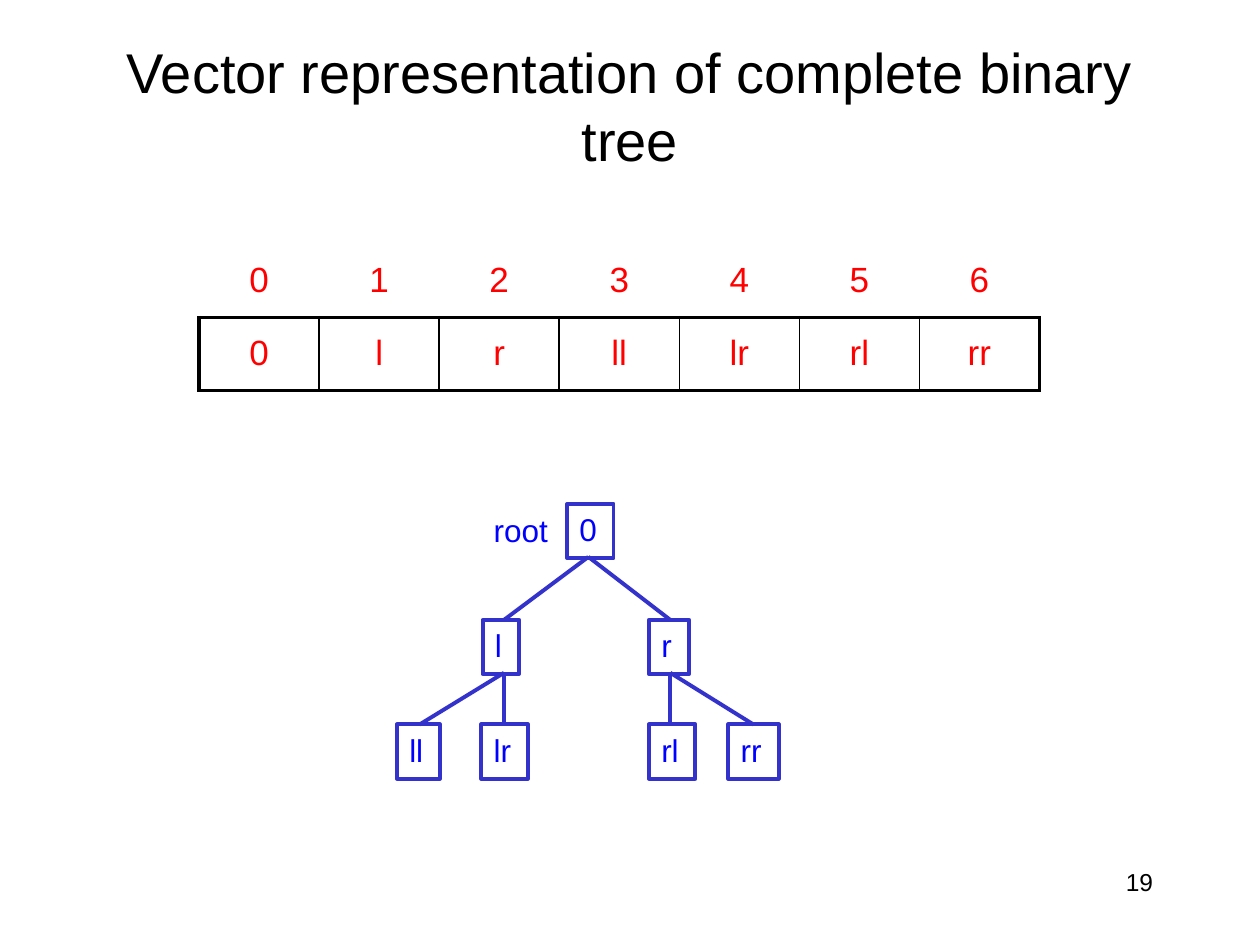
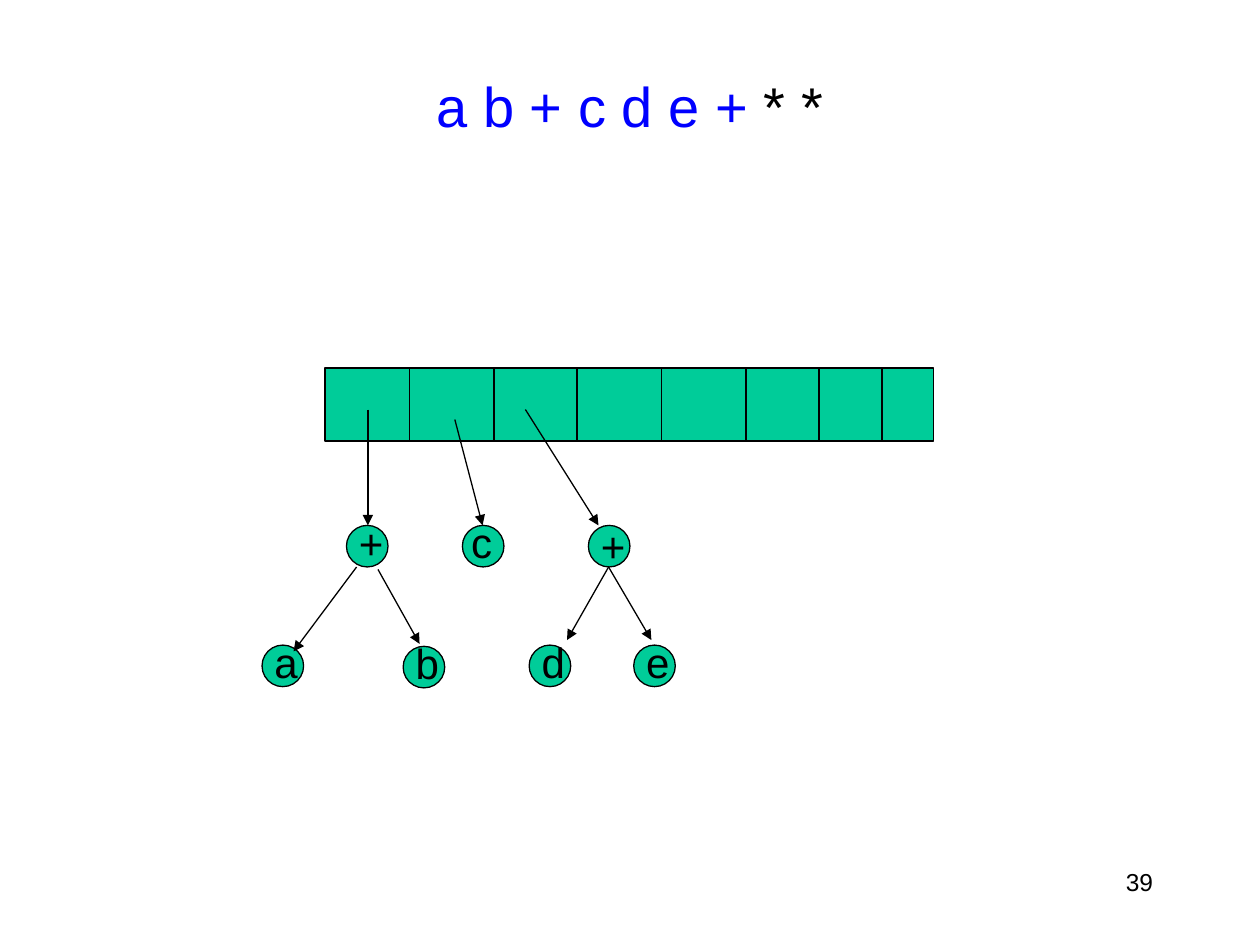
import itertools
from dataclasses import dataclass

import pptx
import pptx.dml.color
import pptx.enum.shapes
import pptx.enum.text
import pptx.oxml
import pptx.oxml.ns
import pptx.util
from pptx.util import Inches

RGBColor = pptx.dml.color.RGBColor
Shape = pptx.enum.shapes.MSO_SHAPE
Align = pptx.enum.text.PP_ALIGN
Anchor = pptx.enum.text.MSO_ANCHOR

BLACK = RGBColor(0x00, 0x00, 0x00)
WHITE = RGBColor(0xFF, 0xFF, 0xFF)
BLUE = RGBColor(0x00, 0x00, 0xFF)
INDIGO = RGBColor(0x33, 0x33, 0xCC)
RED = RGBColor(0xFF, 0x00, 0x00)
GREEN = RGBColor(0x00, 0xCC, 0x99)
FONT = "Arial"

THICK, THIN, INNER = 2.25, 0.75, 1
NODE_HEIGHT, PORT_DROP = 0.43, 0.42
CIRCLE = 0.33
VECTOR_LEFT, VECTOR_WIDTH = 1.58, 6.67
STACK_LEFT, STACK_TOP, STACK_WIDTH, STACK_HEIGHT = 2.58, 2.92, 4.83, 0.58


@dataclass(frozen=True)
class Style:
    size: float
    color: RGBColor
    align: Align = Align.LEFT
    anchor: Anchor = Anchor.TOP
    wrap: bool = False


@dataclass(frozen=True)
class TreeNode:
    label: str
    left: float
    top: float
    width: float
    port: float


@dataclass(frozen=True)
class Token:
    label: str
    left: float
    top: float
    width: float
    shift: float = 0
    rise: float = 0.12


@dataclass(frozen=True)
class Segment:
    x1: float
    y1: float
    x2: float
    y2: float


@dataclass(frozen=True)
class Borders:
    color: RGBColor
    outer: float
    inner: float


TITLE = Style(32, BLACK, Align.CENTER, Anchor.MIDDLE, True)
NUMBER = Style(14, BLACK, Align.RIGHT, wrap=True)
NODE = Style(18, BLUE)
TOKEN = Style(24, BLACK)
CELL = Style(20, RED, Align.CENTER)

TREE = [
    TreeNode("0", 4.5, 4, 0.37, 4.67),
    TreeNode("l", 3.83, 4.92, 0.29, 4),
    TreeNode("r", 5.15, 4.92, 0.32, 5.32),
    TreeNode("ll", 3.15, 5.75, 0.34, 3.33),
    TreeNode("lr", 3.82, 5.75, 0.37, 4),
    TreeNode("rl", 5.15, 5.75, 0.37, 5.32),
    TreeNode("rr", 5.78, 5.75, 0.4, 5.98),
]
TOKENS = [
    Token("+", 2.75, 4.17, 0.4, rise=0.11),
    Token("a", 2.08, 5.12, 0.39),
    Token("b", 3.2, 5.13, 0.39),
    Token("c", 3.67, 4.17, 0.37, shift=-0.03),
    Token("+", 4.67, 4.17, 0.4, rise=0.09),
    Token("d", 4.2, 5.12, 0.39),
    Token("e", 5.03, 5.12, 0.39),
]
POINTERS = [
    Segment(2.92, 3.25, 2.92, 4.17),
    Segment(3.61, 3.33, 3.83, 4.17),
    Segment(4.17, 3.25, 4.75, 4.17),
    Segment(2.83, 4.5, 2.33, 5.17),
    Segment(3, 4.52, 3.33, 5.11),
    Segment(4.83, 4.5, 4.5, 5.08),
    Segment(4.83, 4.5, 5.17, 5.08),
]
SLOT_WIDTHS = [0.67, 0.67, 0.66, 0.67, 0.67, 0.58, 0.5]


def apply(target, values: dict) -> None:
    for name, value in values.items():
        setattr(target, name, value)


def write(frame, parts: list[tuple[str, RGBColor]], style: Style) -> None:
    para = frame.paragraphs[0]
    para.alignment = style.align
    for text, color in parts:
        span = para.add_run()
        span.text = text
        apply(span.font, {"name": FONT, "size": pptx.util.Pt(style.size)})
        span.font.color.rgb = color


def add_text(page, left: float, top: float, width: float, height: float,
             style: Style, *parts: tuple[str, RGBColor]) -> None:
    box = page.shapes.add_textbox(
        Inches(left), Inches(top), Inches(width), Inches(height))
    apply(box.text_frame,
          {"word_wrap": style.wrap, "vertical_anchor": style.anchor})
    write(box.text_frame, list(parts), style)


def add_outline(page, kind: Shape, left: float, top: float, width: float,
                height: float, color: RGBColor, weight: float,
                fill: RGBColor | None = None):
    shape = page.shapes.add_shape(
        kind, Inches(left), Inches(top), Inches(width), Inches(height))
    shape.shadow.inherit = False
    if fill is None:
        shape.fill.background()
    else:
        shape.fill.solid()
        shape.fill.fore_color.rgb = fill
    shape.line.color.rgb = color
    shape.line.width = pptx.util.Pt(weight)
    return shape


def add_segment(page, segment: Segment, color: RGBColor, weight: float,
                arrow: bool = False) -> None:
    line = page.shapes.add_connector(
        pptx.enum.shapes.MSO_CONNECTOR.STRAIGHT,
        Inches(segment.x1), Inches(segment.y1),
        Inches(segment.x2), Inches(segment.y2))
    line.line.color.rgb = color
    line.line.width = pptx.util.Pt(weight)
    properties = line.element.spPr
    if arrow:
        outline = properties.find(pptx.oxml.ns.qn("a:ln"))
        outline.append(pptx.oxml.parse_xml(
            f'<a:tailEnd {pptx.oxml.ns.nsdecls("a")} type="triangle"/>'))
    properties.append(pptx.oxml.parse_xml(
        f'<a:effectLst {pptx.oxml.ns.nsdecls("a")}/>'))


def set_borders(cell, color: RGBColor, weights: dict[str, float]) -> None:
    properties = cell._tc.get_or_add_tcPr()
    for position, (side, weight) in enumerate(weights.items()):
        properties.insert(position, pptx.oxml.parse_xml(
            f'<a:ln{side} {pptx.oxml.ns.nsdecls("a")} '
            f'w="{pptx.util.Pt(weight)}"><a:solidFill>'
            f'<a:srgbClr val="{color}"/></a:solidFill></a:ln{side}>'))


def add_row(page, top: float, height: float, labels: list[str],
            borders: Borders) -> None:
    table = page.shapes.add_table(
        1, len(labels), Inches(VECTOR_LEFT), Inches(top),
        Inches(VECTOR_WIDTH), Inches(height)).table
    apply(table, {"first_row": False, "horz_banding": False})
    last = len(labels) - 1
    for index, label in enumerate(labels):
        table.columns[index].width = Inches(VECTOR_WIDTH / len(labels))
        cell = table.cell(0, index)
        cell.fill.background()
        if label:
            write(cell.text_frame, [(label, CELL.color)], CELL)
        set_borders(cell, borders.color, {
            "L": borders.outer if index == 0 else borders.inner,
            "R": borders.outer if index == last else borders.inner,
            "T": borders.outer,
            "B": borders.outer,
        })


def add_page(deck, number: int, *title: tuple[str, RGBColor]):
    page = deck.slides.add_slide(deck.slide_layouts[6])
    add_text(page, 0.75, 0.42, 8.5, 0.83, TITLE, *title)
    add_text(page, 7.17, 6.83, 2.08, 0.5, NUMBER, (str(number), BLACK))
    return page


def build_vector_page(deck) -> None:
    page = add_page(
        deck, 19, ("Vector representation of complete binary tree", BLACK))
    for node in TREE:
        box = add_outline(page, Shape.RECTANGLE, node.left, node.top,
                          node.width, NODE_HEIGHT, INDIGO, THICK)
        apply(box.text_frame,
              {"word_wrap": NODE.wrap, "vertical_anchor": NODE.anchor})
        write(box.text_frame, [(node.label, NODE.color)], NODE)
    for index, child in enumerate(TREE[1:], 1):
        parent = TREE[(index - 1) // 2]
        edge = Segment(parent.port, parent.top + PORT_DROP,
                       child.port, child.top)
        add_segment(page, edge, INDIGO, THICK)
    add_text(page, 3.82, 4.01, 0.63, 0.4, NODE, ("root", BLUE))
    plain = Borders(WHITE, THICK, THICK)
    add_row(page, 2.6, 0.56, [node.label for node in TREE], plain)
    add_row(page, 2.02, 0.56, [str(i) for i in range(len(TREE))], plain)
    add_row(page, 2.52, 0.58, [""] * len(TREE), Borders(BLACK, THICK, INNER))


def build_stack_page(deck) -> None:
    page = add_page(deck, 39, ("a b + c d e +", BLUE), (" * *", BLACK))
    add_outline(page, Shape.RECTANGLE, STACK_LEFT, STACK_TOP, STACK_WIDTH,
                STACK_HEIGHT, BLACK, THIN, GREEN)
    for offset in itertools.accumulate(SLOT_WIDTHS):
        x = STACK_LEFT + offset
        divider = Segment(x, STACK_TOP, x, STACK_TOP + STACK_HEIGHT)
        add_segment(page, divider, BLACK, THIN)
    for token in TOKENS:
        add_outline(page, Shape.OVAL, token.left, token.top, CIRCLE, CIRCLE,
                    BLACK, THIN, GREEN)
        add_text(page, token.left + token.shift, token.top - token.rise,
                 token.width, 0.5, TOKEN, (token.label, BLACK))
    for pointer in POINTERS:
        add_segment(page, pointer, BLACK, THIN, arrow=True)


def main() -> None:
    deck = pptx.Presentation()
    apply(deck, {"slide_width": Inches(10), "slide_height": Inches(7.5)})
    build_vector_page(deck)
    build_stack_page(deck)
    deck.save("out.pptx")


if __name__ == "__main__":
    main()
